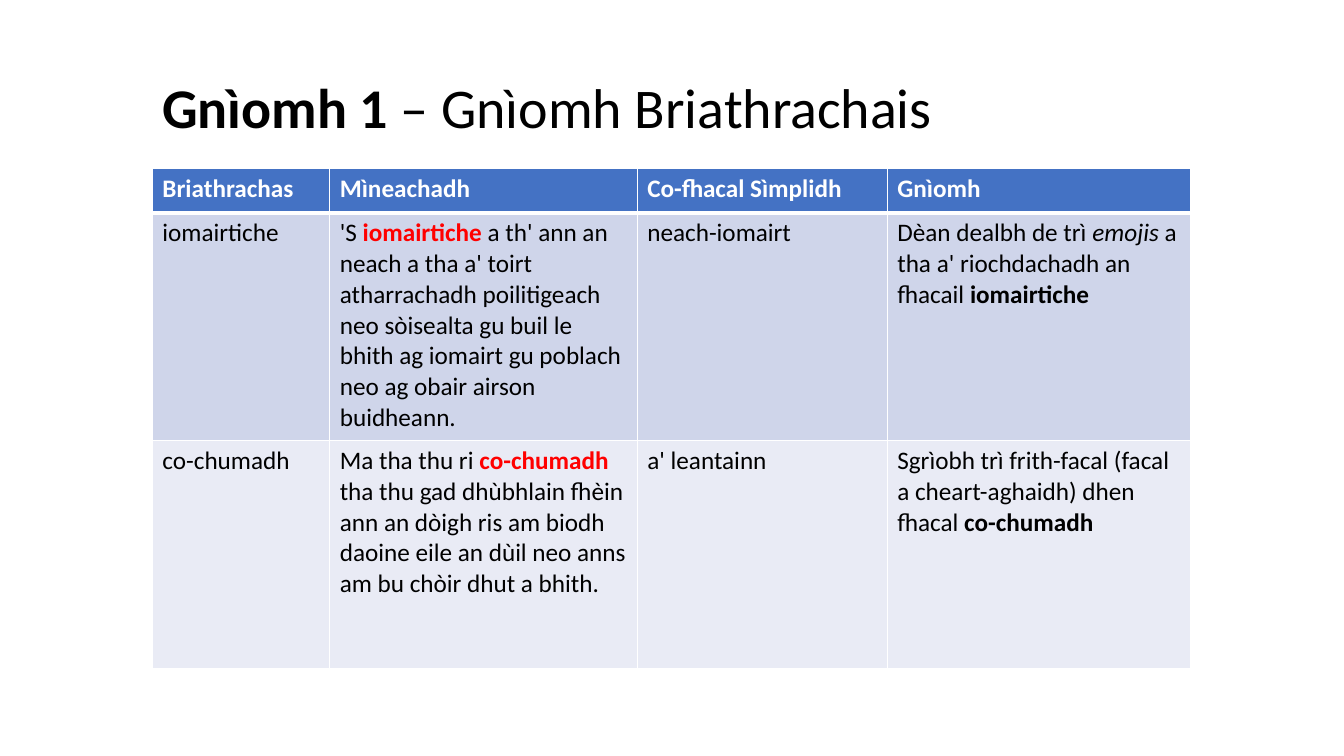
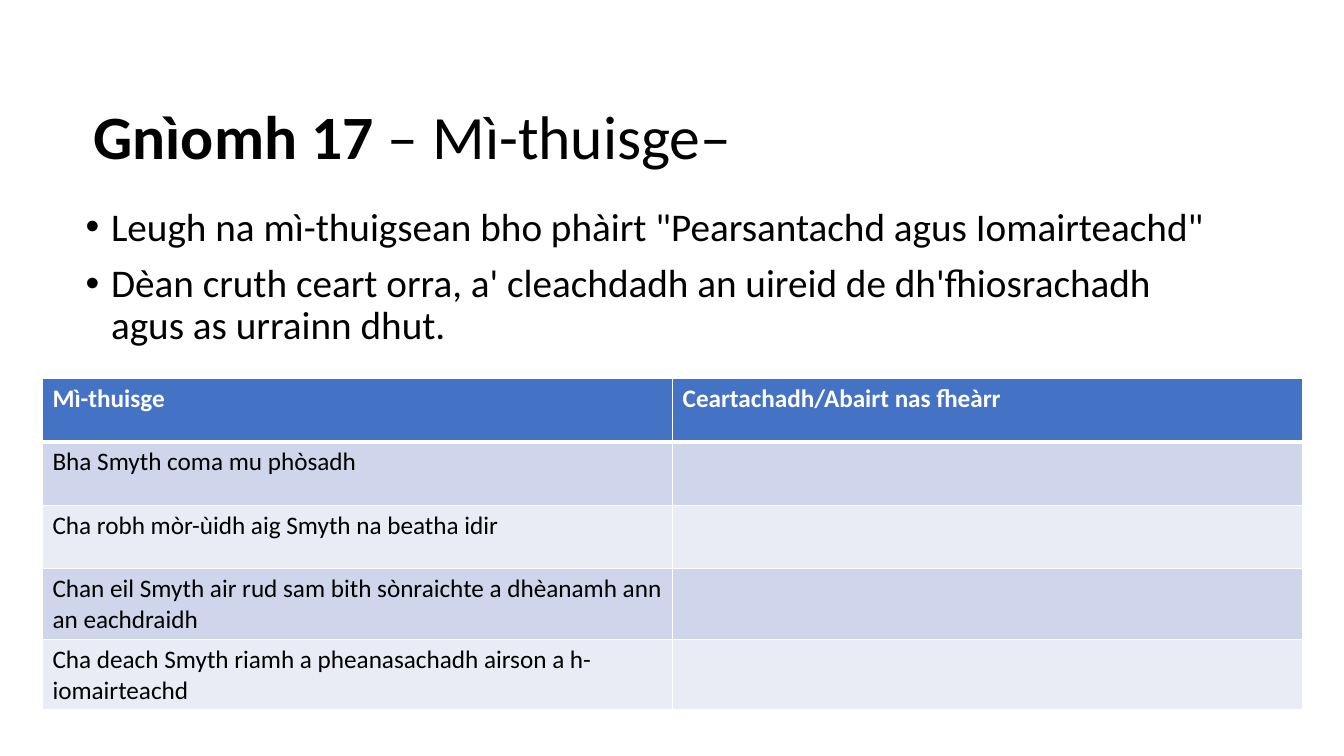
from dataclasses import dataclass

from lxml import etree
from pptx import Presentation
from pptx.dml.color import RGBColor
from pptx.enum.text import MSO_ANCHOR
from pptx.oxml.ns import qn
from pptx.util import Cm, Pt

MIDDLE = MSO_ANCHOR.MIDDLE
TOP = MSO_ANCHOR.TOP


@dataclass(frozen=True)
class Theme:
    """Colours and type sizes shared by all slides."""

    font: str = "Calibri"
    ink: str = "000000"
    white: str = "FFFFFF"
    red: str = "FF0000"
    head: str = "4472C4"
    bands: tuple = ("CFD5EA", "E9EBF5")
    body: int = 28
    cell: int = 18
    rule: int = 1
    thick: int = 3
    lead: float = 0.9
    gap: int = 10


THEME = Theme()
STYLES = {
    "plain": {"bold": False, "italic": False},
    "bold": {"bold": True, "italic": False},
    "slant": {"bold": False, "italic": True},
    "key": {"bold": True, "italic": False, "color": THEME.red},
    "head": {"bold": True, "italic": False, "color": THEME.white},
}

WORDS = [
    ["Briathrachas", "Mìneachadh", "Co-fhacal Sìmplidh", "Gnìomh"],
    [
        "iomairtiche",
        [
            ("'S ", "plain"),
            ("iomairtiche ", "key"),
            ("a th' ann an neach a tha a' toirt atharrachadh poilitigeach "
             "neo sòisealta gu buil le bhith ag iomairt gu poblach "
             "neo ag obair airson buidheann.", "plain"),
        ],
        "neach-iomairt",
        [
            ("Dèan dealbh de trì ", "plain"),
            ("emojis", "slant"),
            (" a tha a' riochdachadh an fhacail ", "plain"),
            ("iomairtiche", "bold"),
        ],
    ],
    [
        "co-chumadh",
        [
            ("Ma tha thu ri ", "plain"),
            ("co-chumadh ", "key"),
            ("tha thu gad dhùbhlain fhèin ann an dòigh ris am biodh daoine "
             "eile an dùil neo anns am bu chòir dhut a bhith.", "plain"),
        ],
        "a' leantainn",
        [
            ("Sgrìobh trì frith-facal (facal a cheart-aghaidh) dhen fhacal ",
             "plain"),
            ("co-chumadh", "bold"),
        ],
    ],
]
TASKS = [
    "Leugh na mì-thuigsean bho phàirt \"Pearsantachd agus Iomairteachd\"",
    "Dèan cruth ceart orra, a' cleachdadh an uireid de dh'fhiosrachadh "
    "agus as urrainn dhut.",
]
MYTHS = [
    ["Mì-thuisge", "Ceartachadh/Abairt nas fheàrr"],
    ["Bha Smyth coma mu phòsadh", ""],
    ["Cha robh mòr-ùidh aig Smyth na beatha idir", ""],
    ["Chan eil Smyth air rud sam bith sònraichte a dhèanamh ann an eachdraidh",
     ""],
    ["Cha deach Smyth riamh a pheanasachadh airson a h-iomairteachd", ""],
]


def write(para, runs, size, base="plain"):
    """Fill a paragraph with plain text or with styled runs."""
    if isinstance(runs, str):
        runs = [(runs, base)] if runs else []
    for text, style in runs:
        run = para.add_run()
        run.text = text
        form = {"name": THEME.font, "size": Pt(size), **STYLES[style]}
        color = form.pop("color", THEME.ink)
        for name, value in form.items():
            setattr(run.font, name, value)
        run.font.color.rgb = RGBColor.from_string(color)


def frame(slide, box, anchor):
    """Add a wrapping text box and return its text frame."""
    area = slide.shapes.add_textbox(*map(Cm, box)).text_frame
    for name, value in {"word_wrap": True, "vertical_anchor": anchor}.items():
        setattr(area, name, value)
    return area


def title(slide, box, lead, rest, size):
    """Add a title with a bold lead and a plain rest."""
    para = frame(slide, box, MIDDLE).paragraphs[0]
    para.line_spacing = THEME.lead
    write(para, [(lead + " ", "bold"), (rest, "plain")], size)


def bullets(slide, box, items):
    """Add a bulleted list."""
    area = frame(slide, box, TOP)
    form = {"line_spacing": THEME.lead, "space_before": Pt(THEME.gap)}
    for spot, item in enumerate(items):
        para = area.add_paragraph() if spot else area.paragraphs[0]
        for name, value in form.items():
            setattr(para, name, value)
        write(para, item, THEME.body)
        props = para._p.get_or_add_pPr()
        props.set("marL", str(Cm(0.64)))
        props.set("indent", str(-Cm(0.64)))
        etree.SubElement(props, qn("a:buFont")).set("typeface", "Arial")
        etree.SubElement(props, qn("a:buChar")).set("char", "•")


def edges(cell, row):
    """Draw white rules round a cell, thick below the header."""
    widths = {
        "L": THEME.rule,
        "R": THEME.rule,
        "T": THEME.thick if row == 1 else THEME.rule,
        "B": THEME.thick if row == 0 else THEME.rule,
    }
    props = cell._tc.get_or_add_tcPr()
    for side, width in widths.items():
        line = etree.SubElement(props, qn("a:ln" + side), w=str(Pt(width)))
        fill = etree.SubElement(line, qn("a:solidFill"))
        etree.SubElement(fill, qn("a:srgbClr"), val=THEME.white)


def grid(slide, spot, cols, rows, data):
    """Add a banded table whose first row is the header."""
    left, top = spot
    size = (left, top, sum(cols), sum(rows))
    table = slide.shapes.add_table(len(rows), len(cols), *map(Cm, size)).table
    for col, width in zip(table.columns, cols):
        col.width = Cm(width)
    for r, (row, height) in enumerate(zip(data, rows)):
        table.rows[r].height = Cm(height)
        color = THEME.bands[(r - 1) % 2] if r else THEME.head
        for c, text in enumerate(row):
            cell = table.cell(r, c)
            edges(cell, r)
            cell.fill.solid()
            cell.fill.fore_color.rgb = RGBColor.from_string(color)
            write(cell.text_frame.paragraphs[0], text, THEME.cell,
                  "plain" if r else "head")


def terms(slide):
    """Build the vocabulary slide."""
    title(slide, (3.84, 1.27, 29.18, 3), "Gnìomh 1",
          "– Gnìomh Briathrachais", 40)
    grid(slide, (3.84, 4.25), (4.47, 7.75, 6.3, 7.65), (1.11, 5.74, 5.74),
         WORDS)


def fixes(slide):
    """Build the misconceptions slide."""
    title(slide, (2.11, 1.68, 29.21, 3.68), "Gnìomh 17", "– Mì-thuisge–", 44)
    bullets(slide, (1.91, 5.1, 29.21, 5.56), TASKS)
    grid(slide, (1.07, 9.53), [15.88] * 2, [1.6] * len(MYTHS), MYTHS)


def main():
    """Build and save the deck."""
    deck = Presentation()
    deck.slide_width, deck.slide_height = Cm(33.87), Cm(19.05)
    for build in (terms, fixes):
        build(deck.slides.add_slide(deck.slide_layouts[6]))
    deck.save("out.pptx")


if __name__ == "__main__":
    main()
